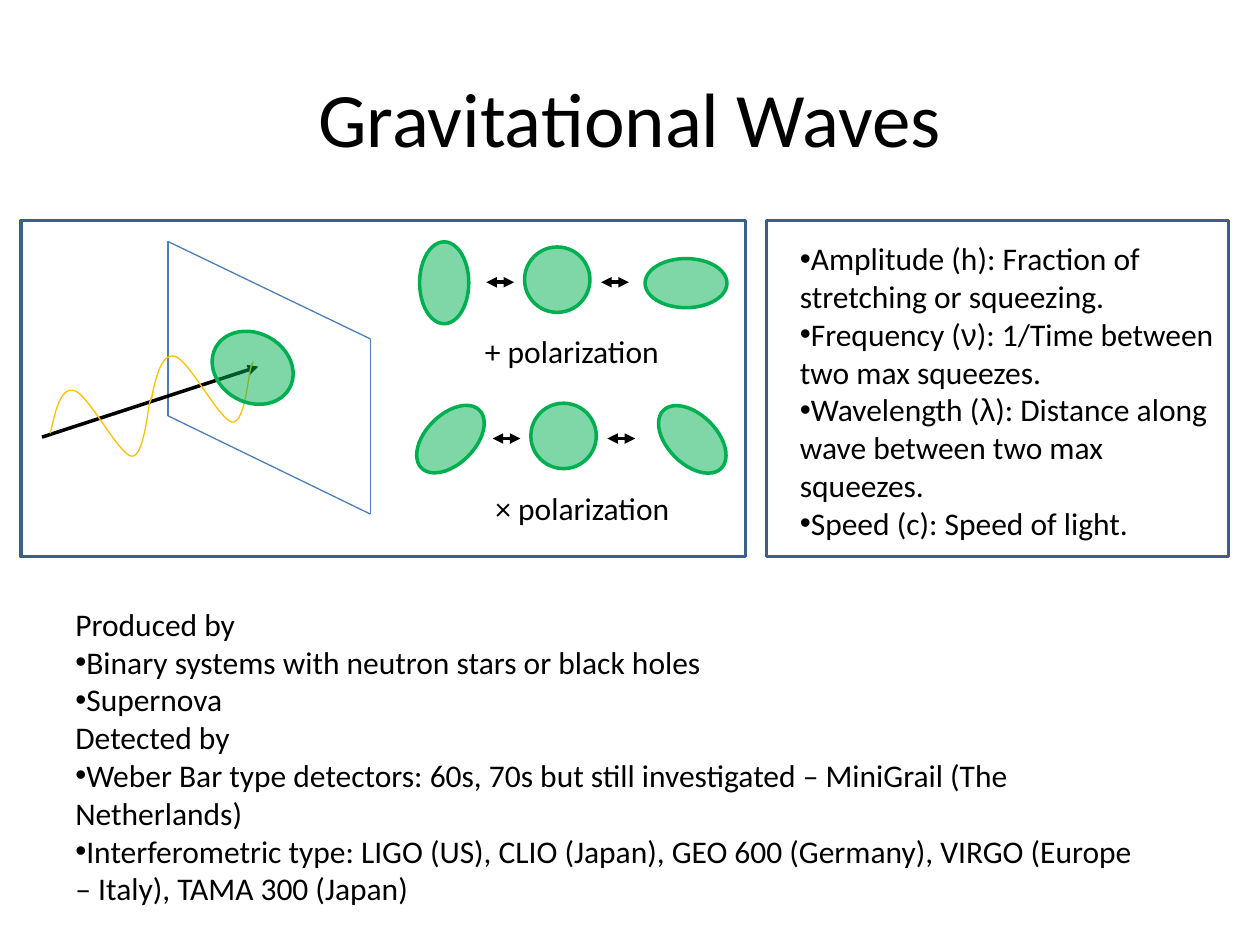
from dataclasses import dataclass
from itertools import groupby

from lxml.etree import SubElement
from pptx import Presentation
from pptx.dml.color import RGBColor
from pptx.enum.shapes import MSO_CONNECTOR, MSO_SHAPE
from pptx.enum.text import MSO_ANCHOR, PP_ALIGN
from pptx.oxml.ns import qn
from pptx.util import Pt


@dataclass(frozen=True)
class Theme:
    black: RGBColor = RGBColor(0x00, 0x00, 0x00)
    frame: RGBColor = RGBColor(0x3A, 0x5F, 0x8C)
    plane: RGBColor = RGBColor(0x4B, 0x7E, 0xBC)
    ring: RGBColor = RGBColor(0x00, 0xB0, 0x50)
    wave: RGBColor = RGBColor(0xFF, 0xC0, 0x00)
    font: str = "Calibri"
    greek_font: str = "Arial"
    title_size: int = 44
    body_size: int = 18
    thick: float = 2
    thin: float = 0.75


theme = Theme()
GREEK = "νλ"

prs = Presentation()
prs.slide_width, prs.slide_height = Pt(720), Pt(540)
s = prs.slides.add_slide(prs.slide_layouts[6])
shapes = s.shapes


def add_text(text, x, y, w, h, size=theme.body_size, align=PP_ALIGN.LEFT, anchor=MSO_ANCHOR.TOP):
    """One paragraph per line; a leading • becomes a real bullet, Greek gets its own font."""
    tf = shapes.add_textbox(Pt(x), Pt(y), Pt(w), Pt(h)).text_frame
    tf.word_wrap = True
    tf.vertical_anchor = anchor
    for i, line in enumerate(text.split("\n")):
        p = tf.add_paragraph() if i else tf.paragraphs[0]
        p.alignment = align
        if line.startswith("•"):
            pPr = p._p.get_or_add_pPr()
            SubElement(pPr, qn("a:buFont")).set("typeface", "Arial")
            SubElement(pPr, qn("a:buChar")).set("char", "•")
        for is_greek, chars in groupby(line.lstrip("•"), key=lambda ch: ch in GREEK):
            r = p.add_run()
            r.text = "".join(chars)
            r.font.name = theme.greek_font if is_greek else theme.font
            r.font.size = Pt(size)
            r.font.color.rgb = theme.black


def add_line(start, end, color, width, arrows=()):
    """arrows holds any of headEnd (at start) and tailEnd (at end), in that order."""
    c = shapes.add_connector(MSO_CONNECTOR.STRAIGHT, *(Pt(v) for v in (*start, *end)))
    c.line.color.rgb = color
    c.line.width = Pt(width)
    for name in arrows:
        SubElement(c.line._get_or_add_ln(), qn(f"a:{name}")).set("type", "triangle")
    SubElement(c._element.spPr, qn("a:effectLst"))


add_text("Gravitational Waves", 36, 21.6, 648, 90, size=theme.title_size,
         align=PP_ALIGN.CENTER, anchor=MSO_ANCHOR.MIDDLE)

# Frames
for x, w in ((12, 414), (438, 264)):
    sp = shapes.add_shape(MSO_SHAPE.RECTANGLE, Pt(x), Pt(126), Pt(w), Pt(192))
    sp.shadow.inherit = False
    sp.fill.background()
    sp.line.color.rgb = theme.frame
    sp.line.width = Pt(theme.thick)

add_text("""•Amplitude (h): Fraction of stretching or squeezing.
•Frequency (ν): 1/Time between two max squeezes.
•Wavelength (λ): Distance along wave between two max squeezes.
•Speed (c): Speed of light.""", 450, 133.2, 252.7, 182.9)

# Plane crossed by the wave
top_left, top_right, bottom_right, bottom_left = (96, 138), (211.7, 193.7), (211.7, 293.8), (96, 237.6)
for start, end in ((top_left, bottom_left), (top_left, top_right),
                   (top_right, bottom_right), (bottom_left, bottom_right)):
    add_line(start, end, theme.plane, theme.thin)
add_line((24, 249.8), (147.6, 209.5), theme.black, theme.thick, ["tailEnd"])

# One period of the wave as cubic curves, relative to its start
PERIOD = [(0, 0), (2.9, -13), (5.8, -26.6), (13.7, -24.5),
          (21.6, -22.3), (38.9, 11.5), (46.1, 13),
          (53.3, 14.4), (55.4, -12.2), (56.9, -18),
          (59, -23), (58.3, -21.6), (56.9, -18.7)]
STEPS = 16
curve = []
for i in range(0, len(PERIOD) - 1, 3):
    for t in (n / STEPS for n in range(1, STEPS + 1)):
        weights = ((1 - t) ** 3, 3 * t * (1 - t) ** 2, 3 * t * t * (1 - t), t ** 3)
        curve.append([sum(k * pt[axis] for k, pt in zip(weights, PERIOD[i:i + 4]))
                      for axis in (0, 1)])
for x, y in ((28.8, 247.7), (86.4, 228.2)):
    fb = shapes.build_freeform(Pt(x), Pt(y))
    fb.add_line_segments([(Pt(x + dx), Pt(y + dy)) for dx, dy in curve], close=False)
    sp = fb.convert_to_shape()
    sp.shadow.inherit = False
    sp.fill.background()
    sp.line.color.rgb = theme.wave
    sp.line.width = Pt(theme.thin)

# Rings: centre, size, rotation; the second row is the first one shifted, its ovals turned 45°
rings = [(144.4, 210.2, 48.2, 39.6, 29)]
for dx, dy, turn in ((0, 0, 90), (3.6, 89.3, 135)):
    rings += [(253.8 + dx, 161.6 + dy, 46.8, 28.1, turn),
              (318.4 + dx, 159.8 + dy, 37.4, 37.4, 90),
              (392 + dx, 161.8 + dy, 28.1, 46.8, turn)]
    for x in (277.9, 343.5):
        add_line((x + dx, 161.3 + dy), (x + dx + 15.9, 161.3 + dy),
                 theme.black, theme.thick, ["headEnd", "tailEnd"])
for cx, cy, w, h, turn in rings:
    sp = shapes.add_shape(MSO_SHAPE.OVAL, Pt(cx - w / 2), Pt(cy - h / 2), Pt(w), Pt(h))
    sp.rotation = turn
    sp.shadow.inherit = False
    sp.fill.solid()
    sp.fill.fore_color.rgb = theme.ring
    SubElement(sp._element.spPr.find(f".//{qn('a:srgbClr')}"), qn("a:alpha")).set("val", "50000")
    sp.line.color.rgb = theme.ring
    sp.line.width = Pt(theme.thick)

add_text("+ polarization", 270, 186, 120, 29)
add_text("× polarization", 276, 276, 120, 29)

add_text("""Produced by
•Binary systems with neutron stars or black holes
•Supernova
Detected by
•Weber Bar type detectors: 60s, 70s but still investigated – MiniGrail (The Netherlands)
•Interferometric type: LIGO (US), CLIO (Japan), GEO 600 (Germany), VIRGO (Europe – Italy), TAMA 300 (Japan)""",
         36, 342, 630, 181.4)

prs.save("out.pptx")
